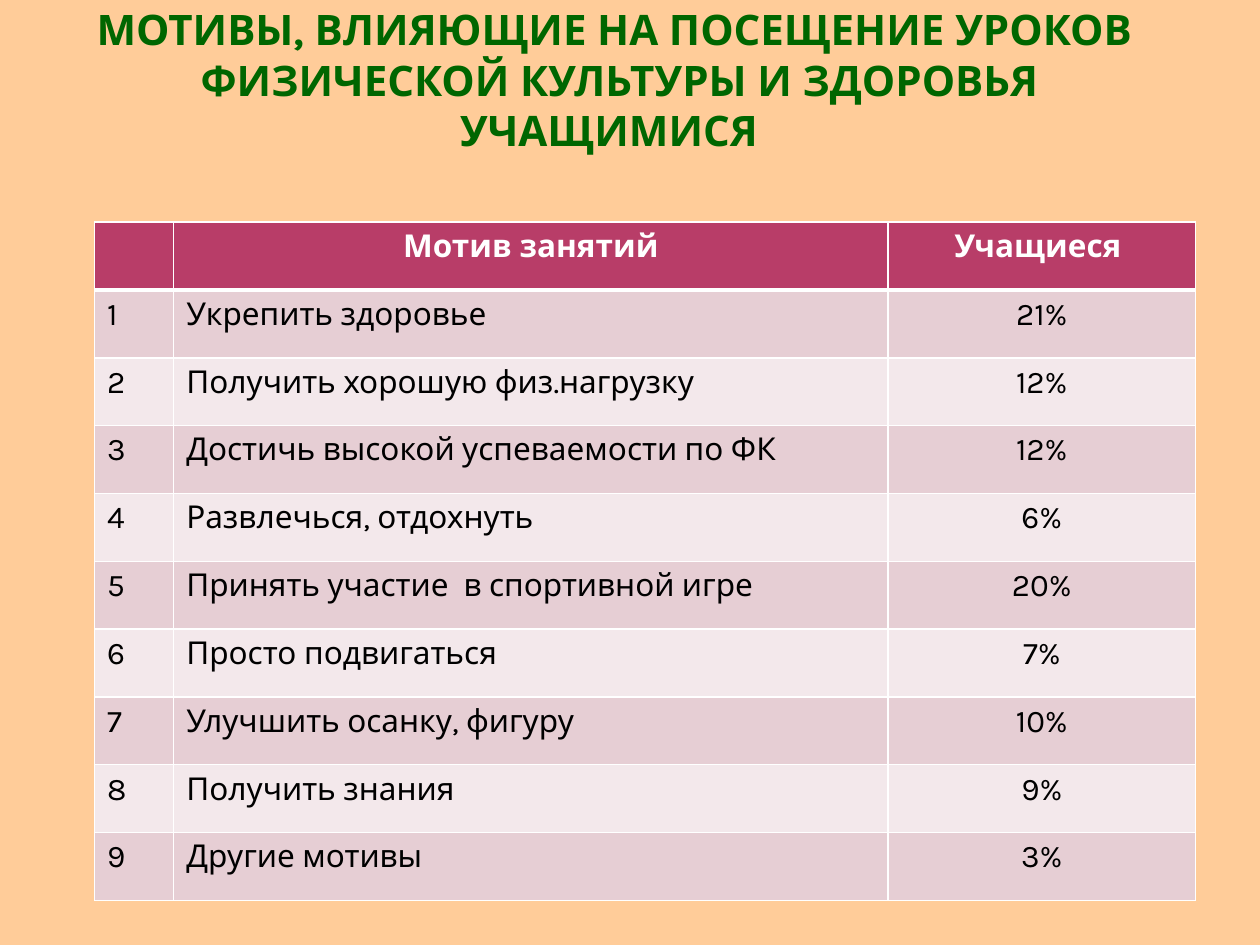
"""Build a slide with a table of students' motives for attending PE lessons."""
from lxml import etree
from pptx import Presentation
from pptx.dml.color import RGBColor
from pptx.enum.text import MSO_ANCHOR, MSO_AUTO_SIZE, PP_ALIGN
from pptx.oxml.ns import qn
from pptx.util import Pt

LEFT, CENTER = PP_ALIGN.LEFT, PP_ALIGN.CENTER
BOTTOM, NO_FIT = MSO_ANCHOR.BOTTOM, MSO_AUTO_SIZE.NONE
PEACH = RGBColor(0xFF, 0xCC, 0x99)
GREEN = RGBColor(0x00, 0x66, 0x00)
CRIMSON = RGBColor(0xB8, 0x3D, 0x68)
ROSE = RGBColor(0xE6, 0xCE, 0xD4)
PALE_ROSE = RGBColor(0xF3, 0xE8, 0xEB)
WHITE = RGBColor(0xFF, 0xFF, 0xFF)
BLACK = RGBColor(0x00, 0x00, 0x00)
FONT = "Karla"

TITLE = ("МОТИВЫ, ВЛИЯЮЩИЕ НА ПОСЕЩЕНИЕ УРОКОВ\n"
         " ФИЗИЧЕСКОЙ КУЛЬТУРЫ И ЗДОРОВЬЯ УЧАЩИМИСЯ ")
HEADER = ("", "Мотив занятий", "Учащиеся ")
MOTIVES = [
    ("Укрепить здоровье", 21),
    ("Получить хорошую физ.нагрузку", 12),
    ("Достичь высокой успеваемости по ФК", 12),
    ("Развлечься, отдохнуть", 6),
    ("Принять участие  в спортивной игре", 20),
    ("Просто подвигаться", 7),
    ("Улучшить осанку, фигуру", 10),
    ("Получить знания", 9),
    ("Другие мотивы", 3),
]
COLUMN_WIDTHS = (45.25, 408.25, 175.75)
ROW_HEIGHT = 38.75


def write(frame, text, size=18, color=BLACK, bold=False, align=LEFT):
    para = frame.paragraphs[0]
    para.text = text
    para.alignment = align
    for span in para.runs:
        span.font.name = FONT
        span.font.size = Pt(size)
        span.font.bold = bold
        span.font.color.rgb = color


def set_border(cell, side, width):
    line = etree.SubElement(cell._tc.get_or_add_tcPr(), qn(f"a:ln{side}"), w=str(Pt(width)))
    fill = etree.SubElement(line, qn("a:solidFill"))
    etree.SubElement(fill, qn("a:srgbClr"), val=str(WHITE))


deck = Presentation()
deck.slide_width, deck.slide_height = Pt(720), Pt(540)
page = deck.slides.add_slide(deck.slide_layouts[5])
page.background.fill.solid()
page.background.fill.fore_color.rgb = PEACH

title = page.shapes.title
title.left, title.top, title.width, title.height = Pt(36), Pt(0), Pt(630), Pt(88.5)
frame = title.text_frame
frame.word_wrap = True
frame.auto_size = NO_FIT
frame.vertical_anchor = BOTTOM
frame.margin_left = frame.margin_right = Pt(3.6)
frame.margin_top = frame.margin_bottom = Pt(0)
write(frame, TITLE, size=24, color=GREEN, bold=True, align=CENTER)

rows = [HEADER]
rows += [(str(number), motive, f"{share}%")
         for number, (motive, share) in enumerate(MOTIVES, 1)]
table = page.shapes.add_table(
    len(rows), len(COLUMN_WIDTHS), Pt(54), Pt(127),
    Pt(sum(COLUMN_WIDTHS)), Pt(ROW_HEIGHT * len(rows))).table
for column, width in zip(table.columns, COLUMN_WIDTHS):
    column.width = Pt(width)

for row_index, texts in enumerate(rows):
    table.rows[row_index].height = Pt(ROW_HEIGHT)
    is_header = row_index == 0
    shade = CRIMSON if is_header else ROSE if row_index % 2 else PALE_ROSE
    for column_index, text in enumerate(texts):
        cell = table.cell(row_index, column_index)
        for side in "LRTB":
            under_header = (row_index, side) in ((0, "B"), (1, "T"))
            set_border(cell, side, 3 if under_header else 1)
        cell.fill.solid()
        cell.fill.fore_color.rgb = shade
        write(cell.text_frame, text, color=WHITE if is_header else BLACK, bold=is_header,
              align=CENTER if is_header or column_index == 2 else LEFT)

deck.save("out.pptx")
